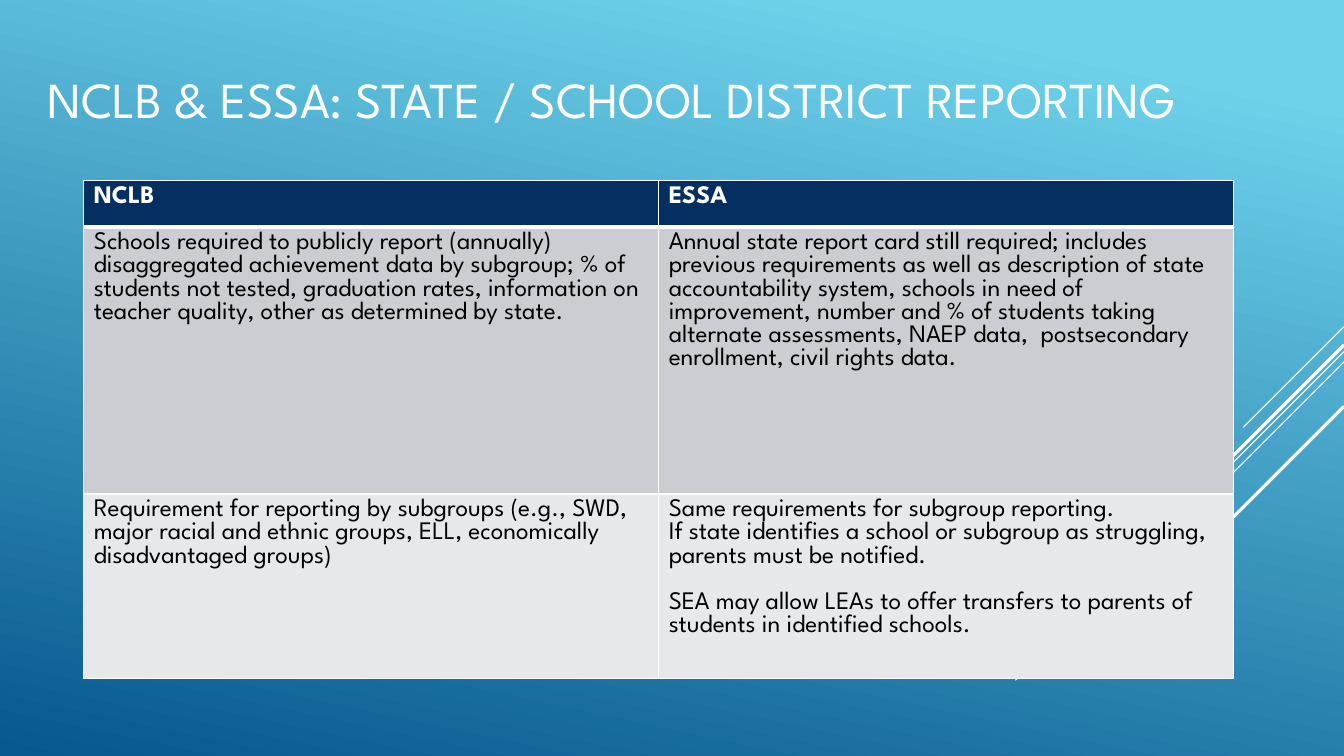
from lxml import etree
from pptx import Presentation
from pptx import util as u
from pptx.dml.color import RGBColor
from pptx.enum import shapes, text
from pptx.oxml import ns

WHITE = RGBColor(0xFF, 0xFF, 0xFF)
BLACK = RGBColor(0x00, 0x00, 0x00)
NAVY = RGBColor(0x05, 0x2F, 0x61)
GREY = RGBColor(0xCC, 0xCD, 0xD2)
PALE_GREY = RGBColor(0xE7, 0xE8, 0xEA)
SKY = RGBColor(0x6E, 0xD2, 0xEB)
OCEAN = RGBColor(0x06, 0x58, 0x8E)
FONT = "League Spartan"

HEADING = "NCLB & ESSA: STATE / SCHOOL DISTRICT REPORTING"
COMPARISON = [
    (["NCLB"], ["ESSA"]),
    (
        ["Schools required to publicly report (annually)  disaggregated achievement data by subgroup; "
         "% of students not tested, graduation rates, information on teacher quality, "
         "other as determined by state."],
        ["Annual state report card still required; includes previous requirements as well as "
         "description of state accountability system, schools in need of improvement, number and % "
         "of students taking alternate assessments, NAEP data,  postsecondary enrollment, "
         "civil rights data."],
    ),
    (
        ["Requirement for reporting by subgroups (e.g., SWD, major racial and ethnic groups, ELL, "
         "economically disadvantaged groups)"],
        ["Same requirements for subgroup reporting.",
         "If state identifies a school or subgroup as struggling, parents must be notified.",
         "SEA may allow LEAs to offer transfers to parents of students in identified schools."],
    ),
]
GAP_BEFORE = {"SEA may allow": 16.6}
ROWS = [
    {"height": 1.17, "fill": NAVY, "color": WHITE, "bold": True, "top": 1, "bottom": 3},
    {"height": 6.73, "fill": GREY, "color": BLACK, "bold": False, "top": 3, "bottom": 1},
    {"height": 3.76, "fill": PALE_GREY, "color": BLACK, "bold": False, "top": 1, "bottom": 1},
]
COLUMN_WIDTH = 14.49
RAYS = [(8.23, 2.54, 0.75), (8.86, 8.28, 0.75), (9.12, 5.26, 0.75), (8.69, 4.85, 2.25), (10.24, 3.53, 2.25)]
SLIDE_WIDTH, SLIDE_HEIGHT = 33.87, 19.05


def write(paragraph, words, color, **formats):
    run = paragraph.add_run()
    run.text = words
    run.font.color.rgb = color
    for name, value in {"name": FONT, **formats}.items():
        setattr(run.font, name, value)


def add_borders(cell, top, bottom):
    properties = cell._tc.get_or_add_tcPr()
    for place, (side, width) in enumerate({"L": 1, "R": 1, "T": top, "B": bottom}.items()):
        edge = etree.Element(ns.qn(f"a:ln{side}"), w=str(u.Pt(width)))
        paint = etree.SubElement(edge, ns.qn("a:solidFill"))
        etree.SubElement(paint, ns.qn("a:srgbClr"), val=str(WHITE))
        properties.insert(place, edge)


def add_background(slide):
    fill = slide.background.fill
    fill.gradient()
    fill.gradient_angle = 258
    for stop, (position, color) in zip(fill.gradient_stops, [(0.1, SKY), (1, OCEAN)]):
        stop.position = position
        stop.color.rgb = color


def add_rays(slide):
    for top, reach, width in RAYS:
        ray = slide.shapes.add_connector(
            shapes.MSO_CONNECTOR.STRAIGHT,
            u.Cm(SLIDE_WIDTH), u.Cm(top), u.Cm(SLIDE_WIDTH - reach), u.Cm(top + reach))
        ray.line.color.rgb = WHITE
        ray.line.width = u.Pt(width)
        etree.SubElement(ray._element.spPr, ns.qn("a:effectLst"))


def add_heading(slide):
    frame = slide.shapes.add_textbox(u.Cm(0.94), u.Cm(0.38), u.Cm(32.41), u.Cm(4.19)).text_frame
    frame.word_wrap = True
    frame.vertical_anchor = text.MSO_ANCHOR.MIDDLE
    write(frame.paragraphs[0], HEADING, WHITE, size=u.Pt(36))


def add_comparison(slide):
    height = sum(row["height"] for row in ROWS)
    table = slide.shapes.add_table(
        len(ROWS), 2, u.Cm(2.11), u.Cm(4.55), u.Cm(2 * COLUMN_WIDTH), u.Cm(height)).table
    for column in table.columns:
        column.width = u.Cm(COLUMN_WIDTH)
    for row, look, entries in zip(table.rows, ROWS, COMPARISON):
        row.height = u.Cm(look["height"])
        for cell, lines in zip(row.cells, entries):
            cell.fill.solid()
            cell.fill.fore_color.rgb = look["fill"]
            add_borders(cell, look["top"], look["bottom"])
            for index, line in enumerate(lines):
                frame = cell.text_frame
                paragraph = frame.add_paragraph() if index else frame.paragraphs[0]
                for opening, gap in GAP_BEFORE.items():
                    if line.startswith(opening):
                        paragraph.space_before = u.Pt(gap)
                write(paragraph, line, look["color"], size=u.Pt(18), bold=look["bold"])


def main():
    deck = Presentation()
    deck.slide_width, deck.slide_height = u.Cm(SLIDE_WIDTH), u.Cm(SLIDE_HEIGHT)
    slide = deck.slides.add_slide(deck.slide_layouts[6])
    add_background(slide)
    add_rays(slide)
    add_heading(slide)
    add_comparison(slide)
    deck.save("out.pptx")


if __name__ == "__main__":
    main()
